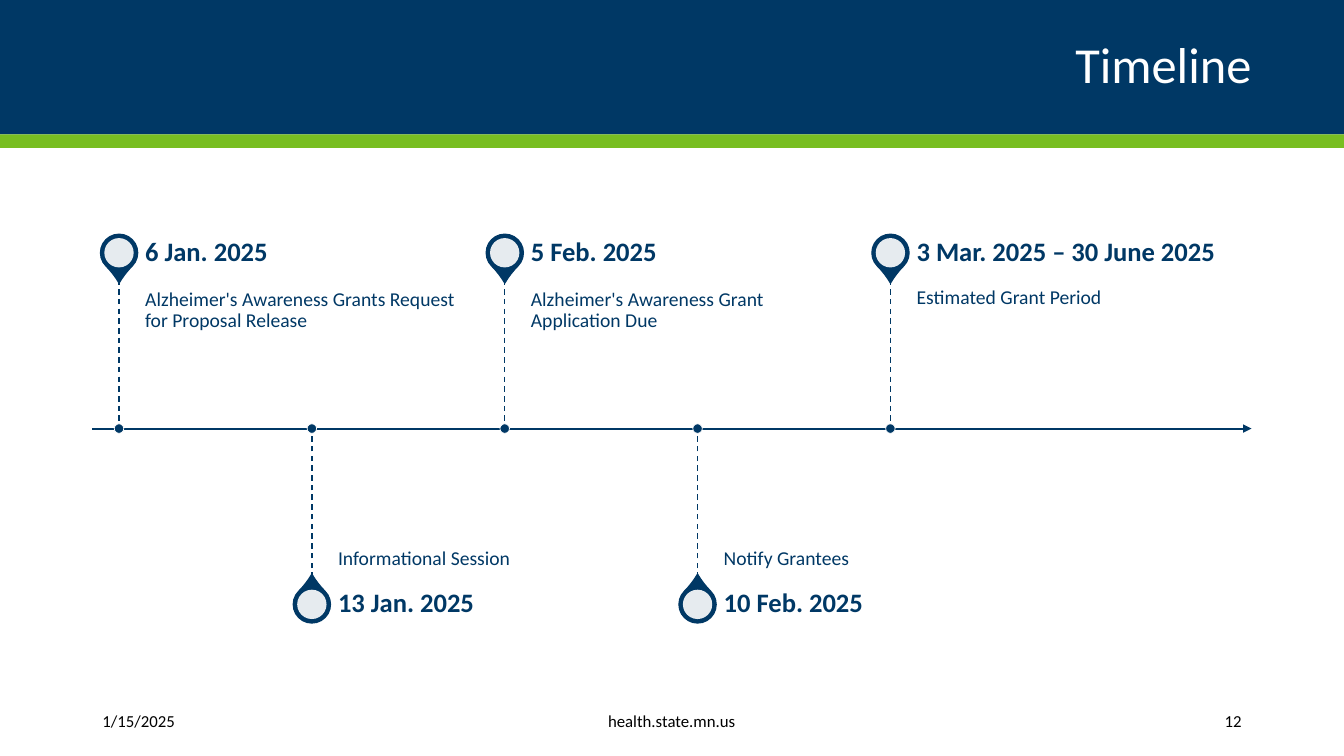
from dataclasses import dataclass

import pptx
import pptx.dml.color
import pptx.enum.dml
import pptx.enum.shapes
import pptx.enum.text
import pptx.oxml.ns
import pptx.oxml.xmlchemy
import pptx.util

NAVY = pptx.dml.color.RGBColor(0x00, 0x38, 0x65)
GREEN = pptx.dml.color.RGBColor(0x78, 0xBE, 0x21)
WHITE = pptx.dml.color.RGBColor(0xFF, 0xFF, 0xFF)
BLACK = pptx.dml.color.RGBColor(0x00, 0x00, 0x00)
FONT = "Calibri"

SLIDE_W, SLIDE_H = 33.87, 19.05
BANNER_H, STRIPE_H = 3.39, 0.34
MARGIN, CONTENT_W = 2.33, 29.21
AXIS_Y = 10.8
FIRST_X, STEP_X = 3.0, 4.86
STEM, PIN_OFFSET = 3.76, 4.43
PIN_D, HOLE_D, DOT_D = 0.94, 0.74, 0.24
TEXT_GAP, TEXT_W, DATE_H = 0.66, 8.1, 1.32


@dataclass
class Milestone:
    date: str
    event: str


@dataclass
class Footer:
    text: str
    left: float
    width: float
    align: pptx.enum.text.PP_ALIGN


MILESTONES = [
    Milestone("6 Jan. 2025", "Alzheimer's Awareness Grants Request for Proposal Release"),
    Milestone("13 Jan. 2025", "Informational Session"),
    Milestone("5 Feb. 2025", "Alzheimer's Awareness Grant Application Due"),
    Milestone("10 Feb. 2025", "Notify Grantees"),
    Milestone("3 Mar. 2025 – 30 June 2025", "Estimated Grant Period"),
]
FOOTERS = [
    Footer("1/15/2025", MARGIN, 3.78, pptx.enum.text.PP_ALIGN.LEFT),
    Footer("health.state.mn.us", 9.17, 15.52, pptx.enum.text.PP_ALIGN.CENTER),
    Footer("12", 27.48, 4.06, pptx.enum.text.PP_ALIGN.RIGHT),
]


def add_filled(s: pptx.slide.Slide, kind: pptx.enum.shapes.MSO_SHAPE, x: float, y: float,
               w: float, h: float, color: pptx.dml.color.RGBColor):
    sp = s.shapes.add_shape(kind, *map(pptx.util.Cm, (x, y, w, h)))
    sp.shadow.inherit = False
    sp.fill.solid()
    sp.fill.fore_color.rgb = color
    sp.line.fill.background()
    return sp


def add_disc(s: pptx.slide.Slide, kind: pptx.enum.shapes.MSO_SHAPE, cx: float, cy: float,
             d: float, color: pptx.dml.color.RGBColor):
    return add_filled(s, kind, cx - d / 2, cy - d / 2, d, d, color)


def set_outline(sp, color: pptx.dml.color.RGBColor, width: float) -> None:
    sp.line.color.rgb = color
    sp.line.width = pptx.util.Pt(width)


def add_text(s: pptx.slide.Slide, text: str, x: float, y: float, w: float, h: float,
             size: float, color: pptx.dml.color.RGBColor,
             align: pptx.enum.text.PP_ALIGN = pptx.enum.text.PP_ALIGN.LEFT,
             anchor: pptx.enum.text.MSO_ANCHOR = pptx.enum.text.MSO_ANCHOR.MIDDLE,
             insets: tuple[float, float, float, float] = (0.25, 0.13, 0.25, 0.13),
             bold: bool = False, spacing: float = 0.9) -> None:
    tf = s.shapes.add_textbox(*map(pptx.util.Cm, (x, y, w, h))).text_frame
    tf.word_wrap = True
    tf.vertical_anchor = anchor
    tf.margin_left, tf.margin_top, tf.margin_right, tf.margin_bottom = map(pptx.util.Cm, insets)
    p = tf.paragraphs[0]
    p.text = text
    p.alignment = align
    p.line_spacing = spacing
    font = p.runs[0].font
    font.name, font.size, font.bold = FONT, pptx.util.Pt(size), bold
    font.color.rgb = color


def add_line(s: pptx.slide.Slide, x1: float, y1: float, x2: float, y2: float, width: float):
    cn = s.shapes.add_connector(pptx.enum.shapes.MSO_CONNECTOR.STRAIGHT,
                                *map(pptx.util.Cm, (x1, y1, x2, y2)))
    set_outline(cn, NAVY, width)
    cn._element.spPr.append(pptx.oxml.xmlchemy.OxmlElement("a:effectLst"))
    return cn


def add_axis(s: pptx.slide.Slide) -> None:
    cn = add_line(s, MARGIN, AXIS_Y, MARGIN + CONTENT_W, AXIS_Y, 1.5)
    tail = pptx.oxml.xmlchemy.OxmlElement("a:tailEnd")
    tail.set("type", "triangle")
    cn._element.spPr.find(pptx.oxml.ns.qn("a:ln")).append(tail)


def add_pin(s: pptx.slide.Slide, x: float, y: float, above: bool) -> None:
    pin = add_disc(s, pptx.enum.shapes.MSO_SHAPE.TEAR, x, y, PIN_D, NAVY)
    pin.adjustments[0] = 1.15
    pin.rotation = 135 if above else 315
    set_outline(pin, NAVY, 0.85)
    hole = add_disc(s, pptx.enum.shapes.MSO_SHAPE.OVAL, x, y, HOLE_D, WHITE)
    alpha = pptx.oxml.xmlchemy.OxmlElement("a:alpha")
    alpha.set("val", "90000")
    hole._element.spPr.find(".//" + pptx.oxml.ns.qn("a:srgbClr")).append(alpha)


def add_milestone(s: pptx.slide.Slide, m: Milestone, x: float, above: bool) -> None:
    side = -1 if above else 1
    pin_y = AXIS_Y + side * PIN_OFFSET
    text_x = x + TEXT_GAP
    anchors = pptx.enum.text.MSO_ANCHOR
    add_pin(s, x, pin_y, above)
    add_text(s, m.event, text_x, AXIS_Y - STEM if above else AXIS_Y, TEXT_W, STEM, 14, NAVY,
             anchor=anchors.TOP if above else anchors.BOTTOM,
             insets=(0, 0.25, 0.25, 0.38) if above else (0, 0.38, 0, 0.25))
    add_text(s, m.date, text_x, pin_y - DATE_H / 2, TEXT_W, DATE_H, 19, NAVY,
             insets=(0, 0, 0.33, 0), bold=True)
    stem = add_line(s, x, AXIS_Y + side * STEM, x, AXIS_Y, 1)
    stem.line.dash_style = pptx.enum.dml.MSO_LINE.DASH
    dot = add_disc(s, pptx.enum.shapes.MSO_SHAPE.OVAL, x, AXIS_Y, DOT_D, NAVY)
    set_outline(dot, WHITE, 0.5)


def main() -> None:
    prs = pptx.Presentation()
    prs.slide_width, prs.slide_height = pptx.util.Cm(SLIDE_W), pptx.util.Cm(SLIDE_H)
    s = prs.slides.add_slide(prs.slide_layouts[6])
    rect = pptx.enum.shapes.MSO_SHAPE.RECTANGLE
    add_filled(s, rect, 0, 0, SLIDE_W, BANNER_H, NAVY)
    add_filled(s, rect, 0, BANNER_H, SLIDE_W, STRIPE_H, GREEN)
    add_text(s, "Timeline", MARGIN, 0, CONTENT_W, BANNER_H, 36, WHITE,
             align=pptx.enum.text.PP_ALIGN.RIGHT, insets=(0, 0.13, 0, 0.13))
    for f in FOOTERS:
        add_text(s, f.text, f.left, 17.65, f.width, 1.01, 12, BLACK, align=f.align, spacing=1.0)
    add_axis(s)
    for i, m in enumerate(MILESTONES):
        add_milestone(s, m, FIRST_X + i * STEP_X, above=i % 2 == 0)
    prs.save("out.pptx")


if __name__ == "__main__":
    main()
